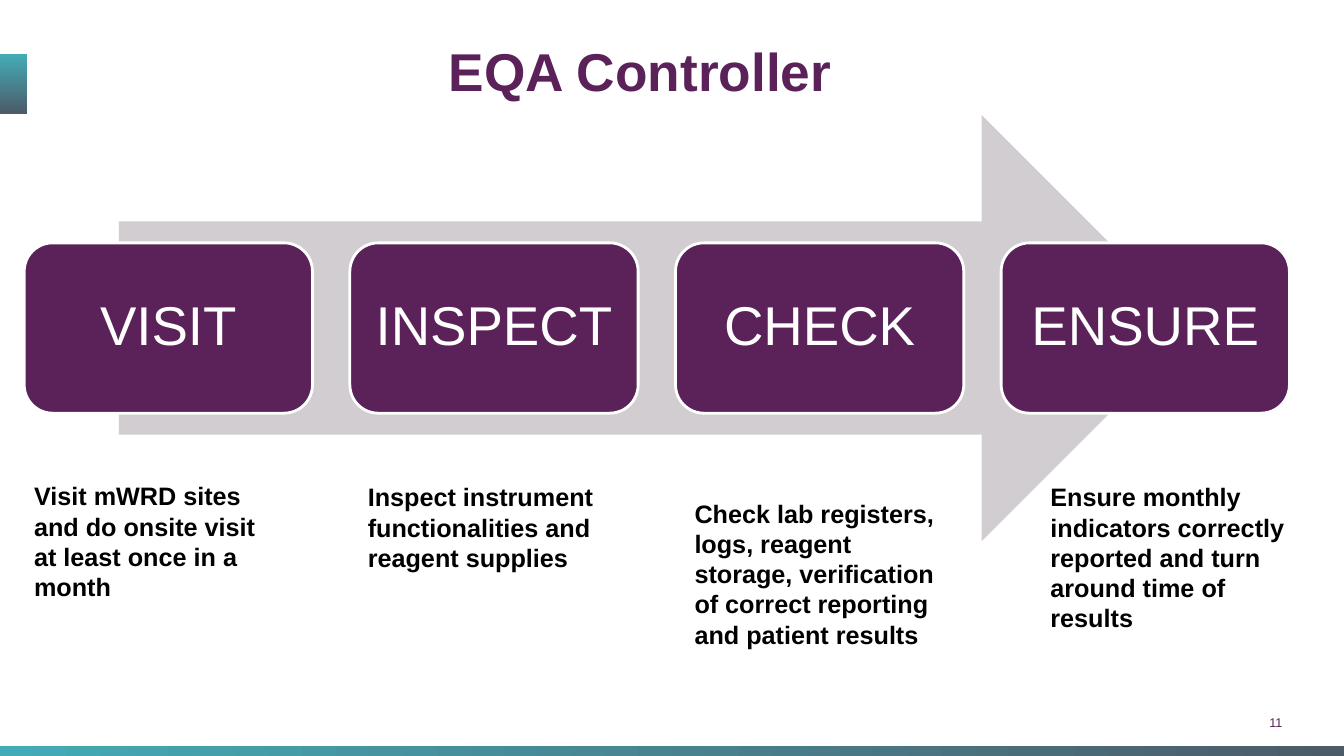
from dataclasses import dataclass

from pptx import Presentation
from pptx.dml.color import RGBColor
from pptx.enum.shapes import MSO_SHAPE
from pptx.enum.text import MSO_ANCHOR, PP_ALIGN
from pptx.shapes.autoshape import Shape
from pptx.slide import Slide
from pptx.util import Inches, Pt

RECTANGLE = MSO_SHAPE.RECTANGLE
ROUNDED = MSO_SHAPE.ROUNDED_RECTANGLE
RIGHT_ARROW = MSO_SHAPE.RIGHT_ARROW
LEFT, CENTER, RIGHT = PP_ALIGN.LEFT, PP_ALIGN.CENTER, PP_ALIGN.RIGHT
TOP, MIDDLE = MSO_ANCHOR.TOP, MSO_ANCHOR.MIDDLE

SLIDE_W, SLIDE_H = Inches(13.33), Inches(7.5)
FONT = "Arial"
COLOURS = {
    "plum": "5A2259",
    "teal": "43ABB6",
    "slate": "4C5B68",
    "arrow": "D2CDD1",
    "white": "FFFFFF",
    "black": "000000",
}


@dataclass(frozen=True)
class Area:
    """A place on the slide, in percent of its width and height."""
    left: float
    top: float
    width: float
    height: float

    def emu(self) -> tuple[int, int, int, int]:
        return (round(SLIDE_W * self.left / 100), round(SLIDE_H * self.top / 100),
                round(SLIDE_W * self.width / 100), round(SLIDE_H * self.height / 100))


@dataclass(frozen=True)
class TextStyle:
    size: float
    colour: str
    bold: bool = False
    align: PP_ALIGN = LEFT
    anchor: MSO_ANCHOR = TOP
    line_spacing: float = 1.0


@dataclass(frozen=True)
class Step:
    verb: str
    duty: str
    duty_area: Area


TITLE_STYLE = TextStyle(38, "plum", bold=True, align=CENTER)
VERB_STYLE = TextStyle(39, "white", align=CENTER, anchor=MIDDLE, line_spacing=0.9)
DUTY_STYLE = TextStyle(18, "black", bold=True)
NUMBER_STYLE = TextStyle(9, "plum", align=RIGHT)

FIRST_STEP = Area(1.8, 32.13, 21.45, 22.53)
STEP_PITCH = 24.23
DUTY_WIDTH = 19.8
STEPS = [
    Step("VISIT", "Visit mWRD sites and do onsite visit at least once in a month",
         Area(1.8, 62.93, DUTY_WIDTH, 17.47)),
    Step("INSPECT", "Inspect instrument functionalities and reagent supplies",
         Area(26.63, 63.07, DUTY_WIDTH, 13.47)),
    Step("CHECK", "Check lab registers, logs, reagent storage, verification "
         "of correct reporting and patient results",
         Area(50.94, 65.2, DUTY_WIDTH, 21.6)),
    Step("ENSURE", "Ensure monthly indicators correctly reported and turn "
         "around time of results",
         Area(77.42, 63.07, DUTY_WIDTH, 17.47)),
]


def rgb(name: str) -> RGBColor:
    return RGBColor.from_string(COLOURS[name])


def write(holder: Shape, text: str, style: TextStyle,
          insets: tuple[float, float, float, float]) -> None:
    """Fill a shape with one paragraph; insets are left, top, right, bottom in inches."""
    frame = holder.text_frame
    frame.word_wrap = True
    frame.vertical_anchor = style.anchor
    (frame.margin_left, frame.margin_top,
     frame.margin_right, frame.margin_bottom) = map(Inches, insets)
    paragraph = frame.paragraphs[0]
    paragraph.text = text
    paragraph.alignment = style.align
    paragraph.line_spacing = style.line_spacing
    paragraph.font.name = FONT
    paragraph.font.size = Pt(style.size)
    paragraph.font.bold = style.bold
    paragraph.font.color.rgb = rgb(style.colour)


def add_text(slide: Slide, area: Area, text: str, style: TextStyle,
             insets: tuple[float, float, float, float] = (0.1, 0.05, 0.1, 0.05)) -> None:
    write(slide.shapes.add_textbox(*area.emu()), text, style, insets)


def add_plain_shape(slide: Slide, kind: MSO_SHAPE, area: Area) -> Shape:
    shape = slide.shapes.add_shape(kind, *area.emu())
    shape.shadow.inherit = False
    shape.line.fill.background()
    return shape


def add_solid(slide: Slide, kind: MSO_SHAPE, area: Area, colour: str) -> Shape:
    shape = add_plain_shape(slide, kind, area)
    shape.fill.solid()
    shape.fill.fore_color.rgb = rgb(colour)
    return shape


def add_gradient_bar(slide: Slide, area: Area, angle: float) -> None:
    """Draw a teal to slate bar; the angle runs counter-clockwise."""
    fill = add_plain_shape(slide, RECTANGLE, area).fill
    fill.gradient()
    fill.gradient_angle = angle
    for stop, position, colour in zip(fill.gradient_stops, (0, 1), ("teal", "slate")):
        stop.position = position
        stop.color.rgb = rgb(colour)


def add_step_box(slide: Slide, column: int, verb: str) -> None:
    area = Area(FIRST_STEP.left + column * STEP_PITCH, FIRST_STEP.top,
                FIRST_STEP.width, FIRST_STEP.height)
    box = add_solid(slide, ROUNDED, area, "plum")
    box.line.color.rgb = rgb("white")
    box.line.width = Pt(2)
    write(box, verb, VERB_STYLE, (0.16, 0.16, 0.16, 0.16))


def main() -> None:
    deck = Presentation()
    deck.slide_width, deck.slide_height = SLIDE_W, SLIDE_H
    slide = deck.slides.add_slide(deck.slide_layouts[6])

    add_text(slide, Area(93.47, 94.53, 1.95, 2), "11", NUMBER_STYLE, (0, 0, 0, 0))
    add_gradient_bar(slide, Area(0, 7.2, 2.03, 7.87), 270)
    add_gradient_bar(slide, Area(0, 98.67, 100, 1.33), 0)
    add_text(slide, Area(11.18, 3.73, 75.32, 11.2), "EQA Controller", TITLE_STYLE,
             (0.1, 0.1, 0.42, 0.1))

    for step in STEPS:
        add_text(slide, step.duty_area, step.duty, DUTY_STYLE)
    add_solid(slide, RIGHT_ARROW, Area(8.85, 15.2, 80.05, 56.4), "arrow")
    for column, step in enumerate(STEPS):
        add_step_box(slide, column, step.verb)

    deck.save("out.pptx")


if __name__ == "__main__":
    main()
